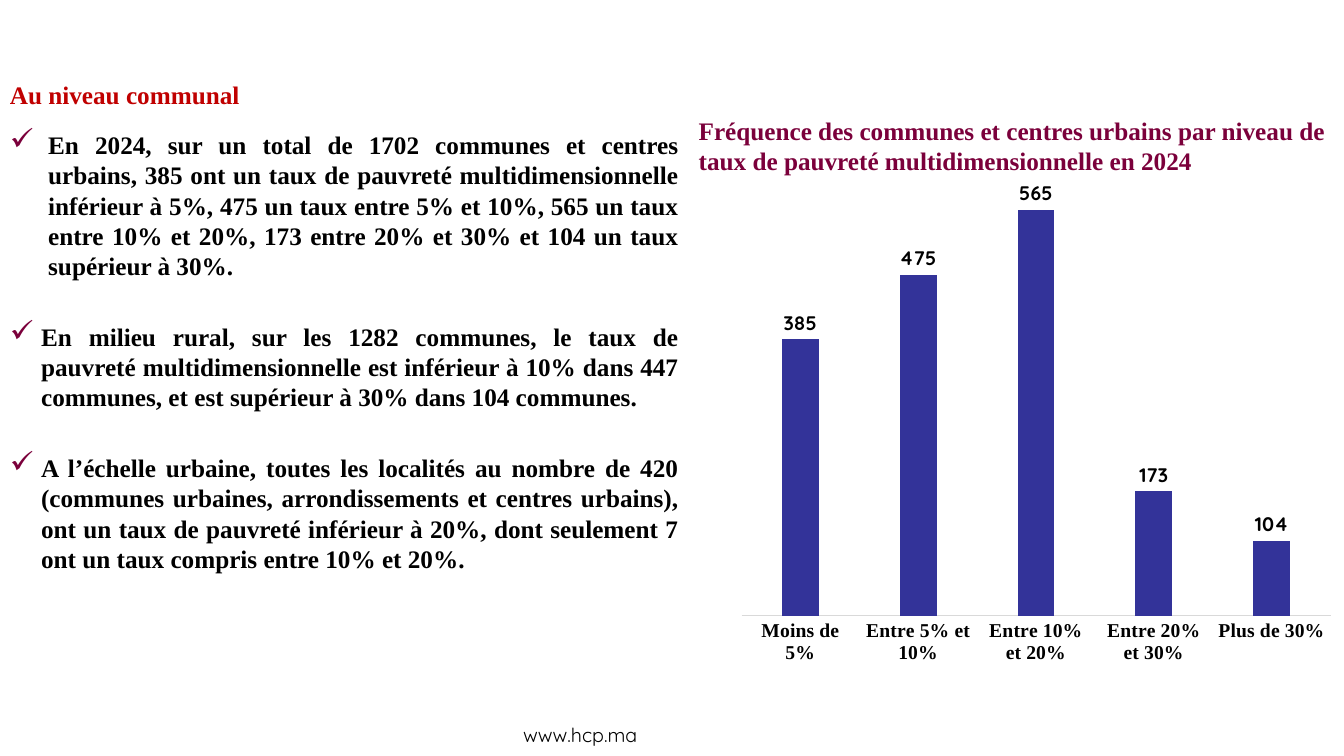
"""Build the slide on multidimensional poverty rates at commune level."""
from dataclasses import dataclass

import lxml.etree
import pptx
import pptx.chart.data
import pptx.dml.color
import pptx.enum.chart
import pptx.enum.text
import pptx.oxml
import pptx.oxml.ns
import pptx.util

Inches = pptx.util.Inches
Pt = pptx.util.Pt
SERIF = "Times New Roman"
SANS = "Quicksand"
COLOURS = {
    "black": "000000",
    "heading": "C00000",
    "plum": "7B003B",
    "bar": "333399",
    "axis": "D9D9D9",
}


@dataclass
class Point:
    """A justified body paragraph; a positive indent gives it a check mark."""
    text: str
    before: float
    indent: float = 0
    colour: str = "black"


@dataclass
class Band:
    """A chart category and its number of communes."""
    label: str
    count: int


POINTS = [
    Point("Au niveau communal", 0, colour="heading"),
    Point("En 2024, sur un total de 1702 communes et centres urbains, 385 ont un taux "
          "de pauvreté multidimensionnelle inférieur à 5%, 475 un taux entre 5% et 10%, "
          "565 un taux entre 10% et 20%, 173 entre 20% et 30% et 104 un taux supérieur "
          "à 30%.", 14, 0.38),
    Point("En milieu rural, sur les 1282 communes, le taux de pauvreté "
          "multidimensionnelle est inférieur à 10% dans 447 communes, et est supérieur "
          "à 30% dans 104 communes.", 29, 0.31),
    Point("A l’échelle urbaine, toutes les localités au nombre de 420 (communes "
          "urbaines, arrondissements et centres urbains), ont un taux de pauvreté "
          "inférieur à 20%, dont seulement 7 ont un taux compris entre 10% et 20%.",
          29, 0.31),
]
BANDS = [
    Band("Moins de 5%", 385),
    Band("Entre 5% et 10%", 475),
    Band("Entre 10% et 20%", 565),
    Band("Entre 20% et 30%", 173),
    Band("Plus de 30%", 104),
]
PLOT_AREA = {"x": 0.053, "y": 0.028, "w": 0.926, "h": 0.825}


def rgb(name: str) -> pptx.dml.color.RGBColor:
    """Return a named colour."""
    return pptx.dml.color.RGBColor.from_string(COLOURS[name])


def set_font(font, size: float, family: str, colour: str = "black", bold: bool = True) -> None:
    """Format a font."""
    font.size = Pt(size)
    font.name = family
    font.bold = bold
    font.color.rgb = rgb(colour)


def write(para, text: str, *, size: float = 18, family: str = SERIF, colour: str = "black",
          bold: bool = True, align=pptx.enum.text.PP_ALIGN.LEFT, before: float = 0) -> None:
    """Write formatted text into a paragraph."""
    para.alignment = align
    para.space_before = Pt(before)
    span = para.add_run()
    span.text = text
    set_font(span.font, size, family, colour, bold)


def add_box(page, left: float, top: float, width: float, height: float):
    """Add a wrapping text box and return its text frame."""
    box = page.shapes.add_textbox(Inches(left), Inches(top), Inches(width), Inches(height))
    box.text_frame.word_wrap = True
    return box.text_frame


def add_check_mark(para, indent: float) -> None:
    """Give a paragraph a hanging check mark."""
    properties = para._p.get_or_add_pPr()
    properties.set("marL", str(Inches(indent)))
    properties.set("indent", str(-Inches(indent)))
    space = pptx.oxml.ns.nsdecls("a")
    for xml in (f'<a:buClr {space}><a:srgbClr val="{COLOURS["plum"]}"/></a:buClr>',
                f'<a:buSzPct {space} val="120000"/>',
                f'<a:buChar {space} char="✓"/>'):
        properties.append(pptx.oxml.parse_xml(xml))


def add_title(page) -> None:
    """Place and fill the title placeholder."""
    title = page.shapes.title
    title.left, title.top = Inches(6.83), Inches(1.03)
    title.width, title.height = Inches(6.51), Inches(0.76)
    title.text_frame.word_wrap = True
    title.text_frame.vertical_anchor = pptx.enum.text.MSO_ANCHOR.BOTTOM
    write(title.text_frame.paragraphs[0],
          "Fréquence des communes et centres urbains par niveau de taux de pauvreté "
          "multidimensionnelle en 2024", colour="plum")


def add_points(page) -> None:
    """Write the heading and the checked points."""
    frame = add_box(page, 0, 0.74, 6.83, 6.46)
    for index, point in enumerate(POINTS):
        para = frame.add_paragraph() if index else frame.paragraphs[0]
        write(para, point.text, colour=point.colour, before=point.before,
              align=pptx.enum.text.PP_ALIGN.JUSTIFY)
        if point.indent:
            add_check_mark(para, point.indent)


def set_plot_area(chart) -> None:
    """Fix the inner plot area as fractions of the chart."""
    plot_area = chart._chartSpace.chart.plotArea
    for old in plot_area.findall(pptx.oxml.ns.qn("c:layout")):
        plot_area.remove(old)
    layout = lxml.etree.Element(pptx.oxml.ns.qn("c:layout"))
    manual = lxml.etree.SubElement(layout, pptx.oxml.ns.qn("c:manualLayout"))
    settings = {"layoutTarget": "inner", "xMode": "edge", "yMode": "edge", **PLOT_AREA}
    for tag, value in settings.items():
        lxml.etree.SubElement(manual, pptx.oxml.ns.qn(f"c:{tag}")).set("val", str(value))
    plot_area.insert(0, layout)


def add_frequency_chart(page) -> None:
    """Add the column chart of communes by poverty rate."""
    data = pptx.chart.data.CategoryChartData()
    data.categories = [band.label for band in BANDS]
    data.add_series("Series 1", [band.count for band in BANDS])
    chart = page.shapes.add_chart(
        pptx.enum.chart.XL_CHART_TYPE.COLUMN_CLUSTERED,
        Inches(7.02), Inches(1.69), Inches(6.31), Inches(5.18), data).chart
    chart.has_title = False
    chart.has_legend = False
    set_font(chart.font, 12, SANS)
    set_plot_area(chart)

    plot = chart.plots[0]
    plot.vary_by_categories = False
    plot.gap_width = 219
    plot.overlap = -27
    fill = plot.series[0].format.fill
    fill.solid()
    fill.fore_color.rgb = rgb("bar")
    plot.has_data_labels = True
    labels = plot.data_labels
    labels.show_value = True
    labels.position = pptx.enum.chart.XL_LABEL_POSITION.OUTSIDE_END
    set_font(labels.font, 14, SANS)

    categories = chart.category_axis
    categories.major_tick_mark = pptx.enum.chart.XL_TICK_MARK.NONE
    categories.format.line.color.rgb = rgb("axis")
    categories.format.line.width = Pt(0.75)
    set_font(categories.tick_labels.font, 14, SERIF)
    values = chart.value_axis
    values.minimum_scale, values.maximum_scale = 0, 600
    values.has_major_gridlines = False
    values.visible = False


def main() -> None:
    """Build and save the deck."""
    deck = pptx.Presentation()
    deck.slide_width, deck.slide_height = Inches(13.33), Inches(7.5)
    page = deck.slides.add_slide(deck.slide_layouts[5])
    write(add_box(page, 5.09, 7.12, 3.15, 0.33).paragraphs[0], "www.hcp.ma",
          size=14, family=SANS, bold=False)
    add_title(page)
    add_points(page)
    add_frequency_chart(page)
    deck.save("out.pptx")


if __name__ == "__main__":
    main()
